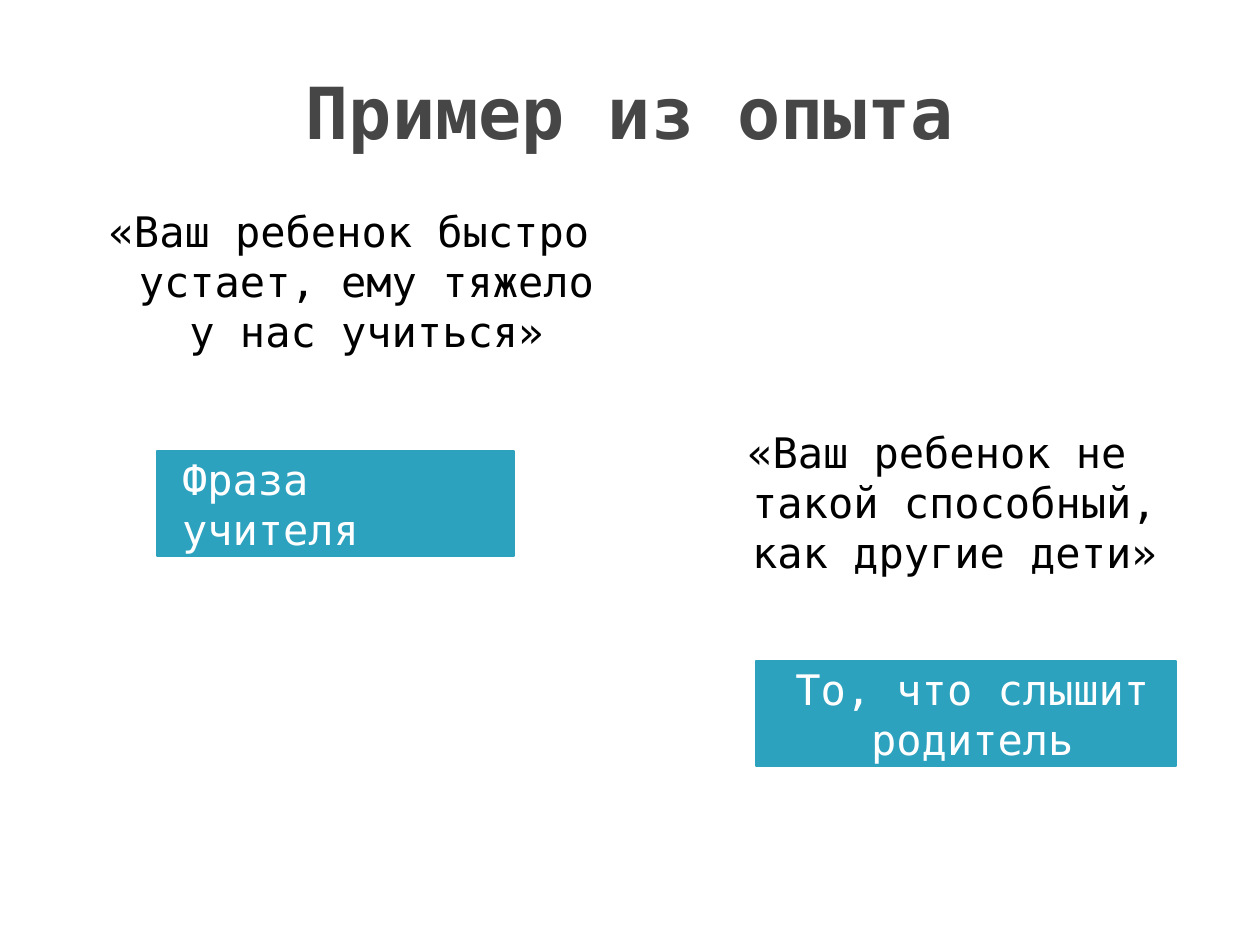
from pptx import Presentation
from pptx.dml.color import RGBColor
from pptx.enum.shapes import MSO_SHAPE
from pptx.enum.text import MSO_ANCHOR, PP_ALIGN
from pptx.util import Emu, Pt

RECT = MSO_SHAPE.RECTANGLE
TOP, MIDDLE = MSO_ANCHOR.TOP, MSO_ANCHOR.MIDDLE
LEFT, CENTER = PP_ALIGN.LEFT, PP_ALIGN.CENTER
FONT = "DejaVu Sans Mono"
TEAL, WHITE, BLACK, GRAY = "2DA2BF", "FFFFFF", "000000", "464646"


def px(n):
    """Turn pixels, 126 to the inch, into EMU."""
    return Emu(round(n * 914400 / 126))


def write(shape, text, size, color, align, anchor):
    frame = shape.text_frame
    frame.word_wrap = True
    frame.vertical_anchor = anchor
    para = frame.paragraphs[0]
    para.alignment = align
    run = para.add_run()
    run.text = text
    run.font.name = FONT
    run.font.size = Pt(size)
    run.font.color.rgb = RGBColor.from_string(color)
    return para


prs = Presentation()
prs.slide_width, prs.slide_height = px(1260), px(945)
slide = prs.slides.add_slide(prs.slide_layouts[6])
shapes = slide.shapes

# Title
title = shapes.add_textbox(px(63), px(32), px(1134), px(157))
head = write(title, "Пример из опыта", 41, GRAY, CENTER, MIDDLE)
head.runs[0].font.bold = True

# Labels
labels = [
    (157, 451, 357, "Фраза учителя", LEFT),
    (756, 661, 420, "То, что слышит родитель", CENTER),
]
for x, y, w, text, align in labels:
    label = shapes.add_shape(RECT, px(x), px(y), px(w), px(105))
    label.shadow.inherit = False
    label.fill.solid()
    label.fill.fore_color.rgb = RGBColor.from_string(TEAL)
    label.line.color.rgb = RGBColor.from_string(TEAL)
    label.line.width = Pt(0.75)
    label.text_frame.margin_left = px(25)
    write(label, text, 24, WHITE, align, MIDDLE)

# Quotes, with a hanging indent
quotes = [
    (63, 199, 543, "«Ваш ребенок быстро устает, ему тяжело у нас учиться»"),
    (651, 420, 326, "«Ваш ребенок не такой способный, как другие дети»"),
]
for x, y, h, text in quotes:
    quote = shapes.add_textbox(px(x), px(y), px(557), px(h))
    para = write(quote, text, 24, BLACK, CENTER, TOP)
    props = para._p.get_or_add_pPr()
    props.set("marL", str(px(50)))
    props.set("indent", str(px(-35)))

prs.save("out.pptx")
